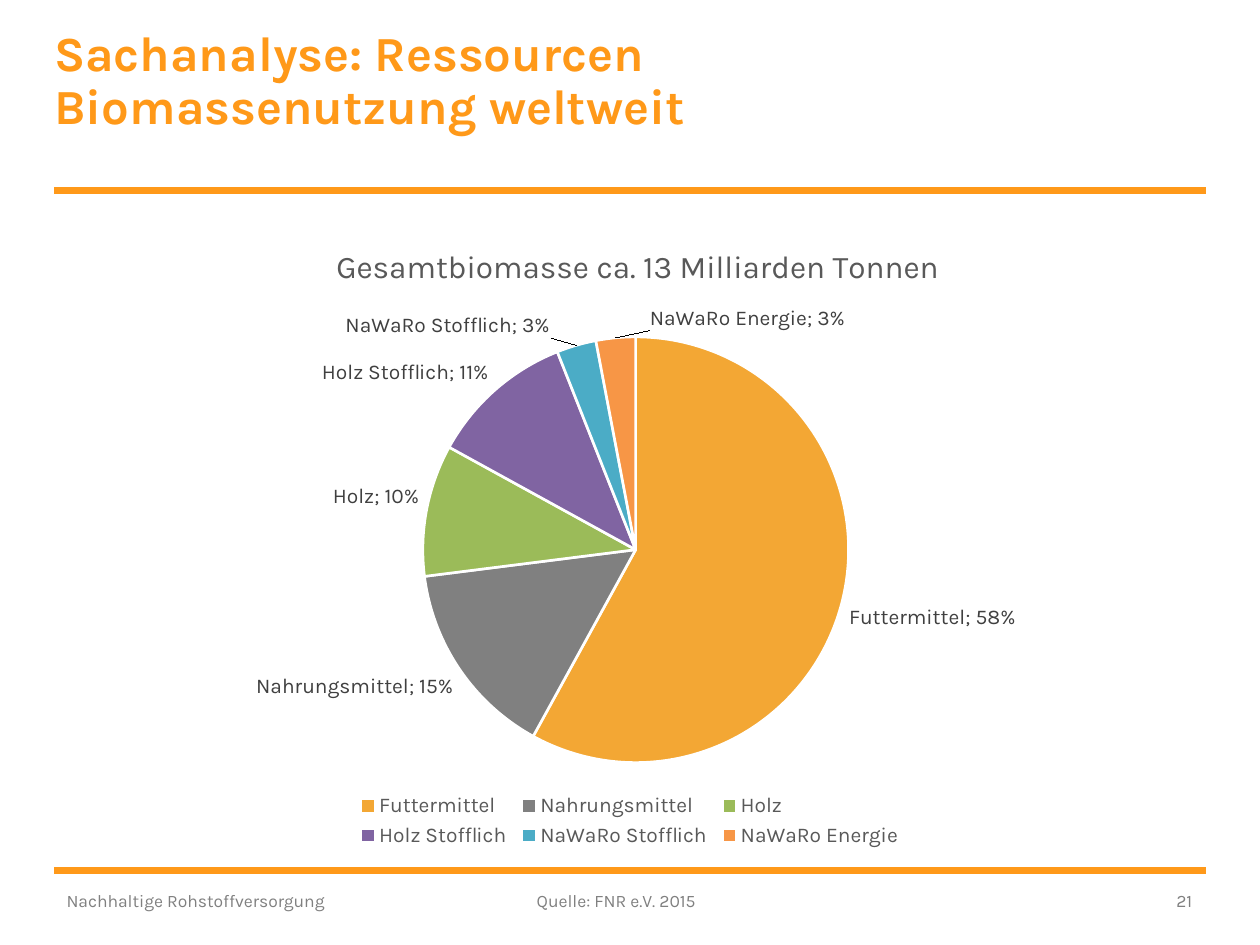
from copy import deepcopy
from dataclasses import dataclass

from lxml import etree
from pptx import Presentation
from pptx.chart.data import CategoryChartData
from pptx.dml.color import RGBColor
from pptx.enum import chart as chart_enum, shapes, text
from pptx.oxml import ns
from pptx.util import Inches, Pt


@dataclass(frozen=True)
class Theme:
    """Colours, font and type sizes of the slide."""
    font: str = "Karla"
    accent: str = "FF9919"
    footer: str = "808080"
    caption: str = "595959"
    label: str = "404040"
    white: str = "FFFFFF"
    title_size: int = 28
    chart_title_size: int = 18
    label_size: int = 12
    footer_size: int = 10


THEME = Theme()
LEFT, RIGHT = 0.43, 9.57
SLICES = [
    ("Futtermittel", 0.58, "F3A734"),
    ("Nahrungsmittel", 0.15, "808080"),
    ("Holz", 0.10, "9BBB59"),
    ("Holz Stofflich", 0.11, "8064A2"),
    ("NaWaRo Stofflich", 0.03, "4BACC6"),
    ("NaWaRo Energie", 0.03, "F79646"),
]
LABEL_SHIFTS = {4: (-0.02, 0), 5: (0.2, 0)}


def style_font(font, size, color, bold=False):
    """Apply the theme font with a size and colour."""
    font.name = THEME.font
    font.size = Pt(size)
    font.bold = bold
    font.color.rgb = RGBColor.from_string(color)


def place(shape, box):
    """Move a shape to a box of left, top, width and height in inches."""
    shape.left, shape.top, shape.width, shape.height = map(Inches, box)


def clear_insets(frame):
    """Remove the inner margins of a text frame."""
    frame.margin_left = frame.margin_right = frame.margin_top = frame.margin_bottom = 0


def add_title(slide, box):
    """Fill the title placeholder with the two-line heading."""
    place(slide.shapes.title, box)
    frame = slide.shapes.title.text_frame
    frame.text = "Sachanalyse: Ressourcen\vBiomassenutzung weltweit"
    frame.auto_size = text.MSO_AUTO_SIZE.NONE
    frame.vertical_anchor = text.MSO_ANCHOR.TOP
    clear_insets(frame)
    paragraph = frame.paragraphs[0]
    paragraph.alignment = text.PP_ALIGN.LEFT
    paragraph.line_spacing = 0.9
    style_font(paragraph.font, THEME.title_size, THEME.accent, bold=True)


def add_rule(slide, top):
    """Draw a horizontal accent rule across the content width."""
    rule = slide.shapes.add_connector(
        shapes.MSO_CONNECTOR.STRAIGHT, Inches(LEFT), Inches(top), Inches(RIGHT), Inches(top))
    rule.line.color.rgb = RGBColor.from_string(THEME.accent)
    rule.line.width = Pt(4)
    etree.SubElement(rule._element.spPr, ns.qn("a:effectLst"))


def add_source(slide, box):
    """Put the source note into the body placeholder."""
    body = slide.placeholders[1]
    place(body, box)
    frame = body.text_frame
    frame.text = "Quelle: FNR e.V. 2015"
    frame.auto_size = text.MSO_AUTO_SIZE.NONE
    frame.vertical_anchor = text.MSO_ANCHOR.MIDDLE
    clear_insets(frame)
    paragraph = frame.paragraphs[0]
    properties = paragraph._p.get_or_add_pPr()
    properties.set("marL", "0")
    properties.set("indent", "0")
    etree.SubElement(properties, ns.qn("a:buNone"))
    paragraph.space_before = Pt(0)
    style_font(paragraph.font, THEME.footer_size, THEME.footer)


def add_footer_text(slide, box, words, alignment):
    """Add one small grey footer text."""
    shape = slide.shapes.add_textbox(*map(Inches, box))
    frame = shape.text_frame
    frame.word_wrap = True
    frame.vertical_anchor = text.MSO_ANCHOR.MIDDLE
    frame.text = words
    paragraph = frame.paragraphs[0]
    paragraph.alignment = alignment
    style_font(paragraph.font, THEME.footer_size, THEME.footer)


def add_footer(slide, top, height):
    """Place footer name, source note and page number in a row."""
    add_footer_text(slide, (LEFT, top, 2.96, height),
                    "Nachhaltige Rohstoffversorgung", text.PP_ALIGN.LEFT)
    add_source(slide, (4.26, top, 2.81, height))
    add_footer_text(slide, (8.98, top, 0.58, height), "21", text.PP_ALIGN.RIGHT)


def make_layout(inner=False, absolute=True, **values):
    """Build a manual chart layout from fractions of the chart size."""
    layout = etree.Element(ns.qn("c:layout"))
    manual = etree.SubElement(layout, ns.qn("c:manualLayout"))
    settings = [("layoutTarget", "inner")] if inner else []
    if absolute:
        settings += [("xMode", "edge"), ("yMode", "edge")]
    for name, value in settings + list(values.items()):
        etree.SubElement(manual, ns.qn(f"c:{name}")).set("val", str(value))
    return layout


def set_layout(parent, layout, before):
    """Replace a layout, keeping it ahead of the named sibling elements."""
    for old in parent.findall(ns.qn("c:layout")):
        parent.remove(old)
    names = [ns.qn(f"c:{name}") for name in before]
    next(child for child in parent if child.tag in names).addprevious(layout)


def add_labels(plot):
    """Show category and share outside the slices, shifting the crowded labels."""
    plot.has_data_labels = True
    labels = plot.series[0].data_labels
    labels.show_value = labels.show_category_name = True
    labels.show_percentage = False
    labels.number_format = "0%"
    labels.number_format_is_linked = False
    labels.position = chart_enum.XL_LABEL_POSITION.OUTSIDE_END
    style_font(labels.font, THEME.label_size, THEME.label)
    element = labels._element
    separator = etree.Element(ns.qn("c:separator"))
    separator.text = "; "
    element.find(ns.qn("c:showBubbleSize")).addnext(separator)
    shared = [child for child in element if child.tag != ns.qn("c:showLeaderLines")]
    for position, (index, (x, y)) in enumerate(LABEL_SHIFTS.items()):
        label = etree.Element(ns.qn("c:dLbl"))
        etree.SubElement(label, ns.qn("c:idx")).set("val", str(index))
        label.append(make_layout(absolute=False, x=x, y=y))
        label.extend(deepcopy(child) for child in shared)
        element.insert(position, label)


def add_pie(slide, box):
    """Add the biomass pie chart with title, labels and legend."""
    data = CategoryChartData(number_format="0%")
    data.categories = [name for name, _, _ in SLICES]
    data.add_series("Series 1", [share for _, share, _ in SLICES])
    chart = slide.shapes.add_chart(
        chart_enum.XL_CHART_TYPE.PIE, *map(Inches, box), data).chart
    style_font(chart.font, THEME.footer_size, "000000")

    chart.has_title = True
    chart.chart_title.include_in_layout = False
    frame = chart.chart_title.text_frame
    frame.text = "Gesamtbiomasse ca. 13 Milliarden Tonnen"
    style_font(frame.paragraphs[0].font, THEME.chart_title_size, THEME.caption)
    set_layout(chart.chart_title._element, make_layout(x=0.24, y=0.05), ["overlay"])

    plot = chart.plots[0]
    plot.vary_by_categories = True
    for index, (_, _, color) in enumerate(SLICES):
        point = plot.series[0].points[index].format
        point.fill.solid()
        point.fill.fore_color.rgb = RGBColor.from_string(color)
        point.line.color.rgb = RGBColor.from_string(THEME.white)
        point.line.width = Pt(1.5)
    add_labels(plot)
    set_layout(chart._chartSpace.chart.plotArea,
               make_layout(inner=True, x=0.32, y=0.2, w=0.37, h=0.66), ["pieChart"])

    chart.has_legend = True
    chart.legend.position = chart_enum.XL_LEGEND_POSITION.BOTTOM
    chart.legend.include_in_layout = False
    style_font(chart.legend.font, THEME.label_size, THEME.caption)
    set_layout(chart.legend._element,
               make_layout(x=0.26, y=0.9, w=0.48, h=0.1), ["overlay"])


def main():
    """Build and save the slide."""
    presentation = Presentation()
    presentation.slide_width, presentation.slide_height = Inches(10), Inches(7.5)
    slide = presentation.slides.add_slide(presentation.slide_layouts[1])
    add_title(slide, (LEFT, 0.23, 6.69, 1.17))
    for top in (1.51, 6.91):
        add_rule(slide, top)
    add_pie(slide, (LEFT, 1.65, RIGHT - LEFT, 5.12))
    add_footer(slide, 6.95, 0.4)
    presentation.save("out.pptx")


if __name__ == "__main__":
    main()
